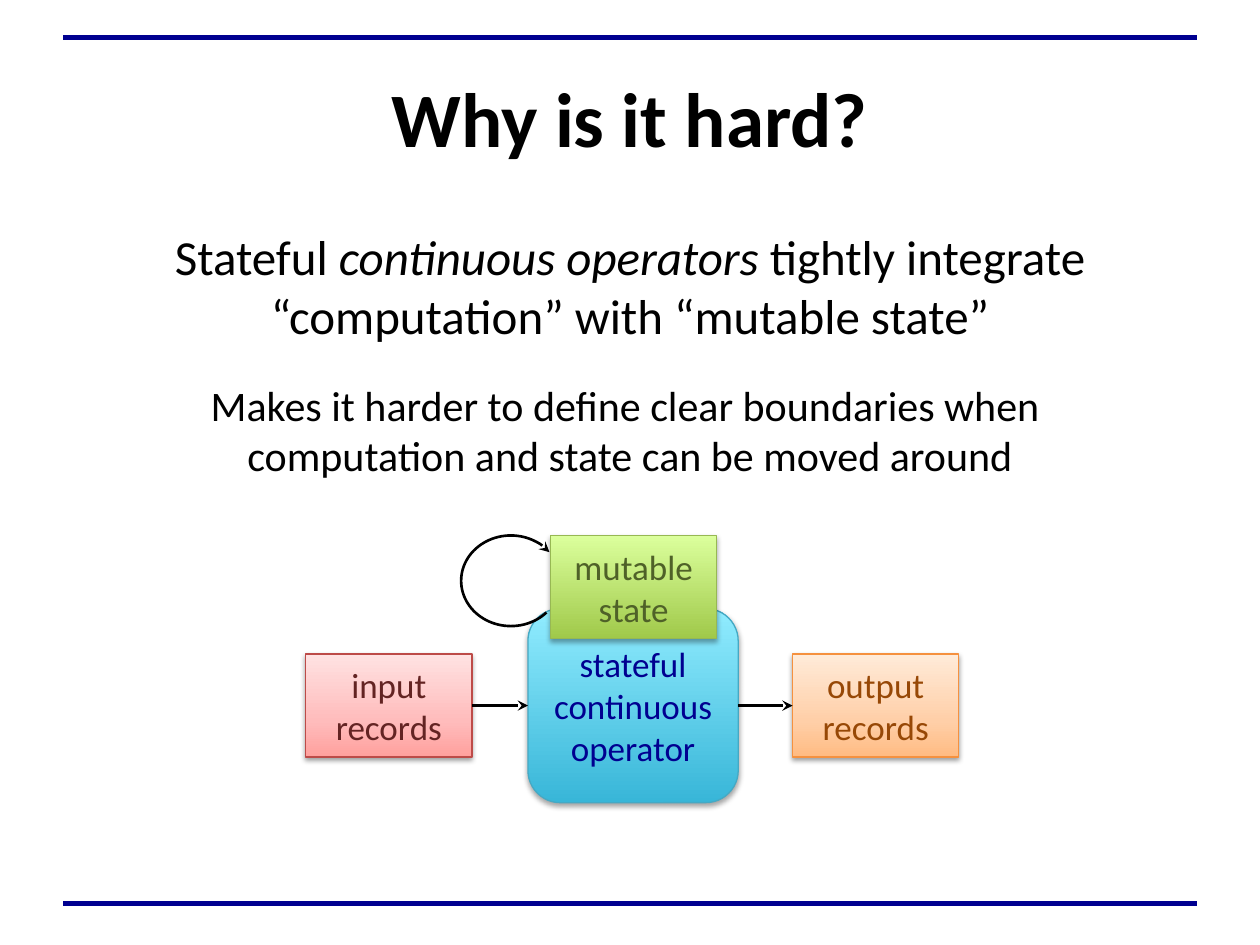
from lxml import etree
from pptx import Presentation
from pptx.dml.color import RGBColor
from pptx.enum.shapes import MSO_CONNECTOR, MSO_SHAPE
from pptx.enum.text import MSO_ANCHOR, PP_ALIGN
from pptx.oxml.ns import qn
from pptx.util import Pt

LINE = MSO_CONNECTOR.STRAIGHT
RECT, ROUND, ARC = MSO_SHAPE.RECTANGLE, MSO_SHAPE.ROUNDED_RECTANGLE, MSO_SHAPE.ARC
TOP, MIDDLE, CENTER = MSO_ANCHOR.TOP, MSO_ANCHOR.MIDDLE, PP_ALIGN.CENTER
hue = RGBColor.from_string


def write(shape, paras, sizes, color="000000", bold=False, gaps=(), side=7.2, anchor=MIDDLE):
    frame = shape.text_frame
    frame.word_wrap = True
    frame.vertical_anchor = anchor
    frame.margin_left = frame.margin_right = Pt(side)
    frame.margin_top = frame.margin_bottom = Pt(3.6)
    for i, runs in enumerate(paras):
        para = frame.paragraphs[0] if i == 0 else frame.add_paragraph()
        para.alignment = CENTER
        para.space_before = Pt(gaps[i] if gaps else 0)
        for j, text in enumerate(runs):
            run = para.add_run()
            run.text = text
            font = run.font
            font.name, font.size = "Calibri", Pt(sizes[i])
            font.bold, font.italic = bold, j % 2 == 1
            font.color.rgb = hue(color)


def stroke(shape, color, width, arrow=False):
    shape.line.color.rgb = hue(color)
    shape.line.width = Pt(width)
    props = shape._element.spPr
    if arrow:
        etree.SubElement(props.find(qn("a:ln")), qn("a:tailEnd"), type="stealth")
    if props.find(qn("a:effectLst")) is None:
        etree.SubElement(props, qn("a:effectLst"))


deck = Presentation()
deck.slide_width, deck.slide_height = Pt(720), Pt(540)
slide = deck.slides.add_slide(deck.slide_layouts[6])
shapes = slide.shapes

for y in (21.6, 516.24):
    rule = shapes.add_connector(LINE, Pt(36), Pt(y), Pt(684), Pt(y))
    stroke(rule, "000090", 3)

title = shapes.add_textbox(Pt(36), Pt(21.6), Pt(648), Pt(90))
write(title, [["Why is it hard?"]], [44], bold=True)

body = shapes.add_textbox(Pt(36), Pt(126), Pt(648), Pt(356.4))
points = [
    ["Stateful ", "continuous operators", " tightly integrate “computation” with “mutable state”"],
    ["Makes it harder to define clear boundaries when "],
    ["computation and state can be moved around"],
]
write(body, points, [28, 24, 24], gaps=(0, 20, 0), anchor=TOP)

boxes = [
    (ROUND, 301.7, 347.8, 120.2, 110.9, ["stateful", "continuous operator"], "000090", "45A9C4",
     [(0, "38B6D8"), (100, "91ECFF")], 35, 1.8),
    (RECT, 314.6, 306, 95, 59, ["mutable state"], "4F6128", "97B853",
     [(0, "A0C94A"), (100, "DBFF9C")], 35, 1.8),
    (RECT, 174.7, 373.7, 95, 59, ["input", "records"], "632423", "BD4B48",
     [(0, "FFA09D"), (35, "FFBCBC"), (100, "FFE2E2")], 38, 1.6),
    (RECT, 452.9, 373.7, 95, 59, ["output", "records"], "974806", "F5913F",
     [(0, "FFBB82"), (35, "FFCFA8"), (100, "FFEBD9")], 38, 1.6),
]
for kind, x, y, w, h, lines, ink, edge, stops, alpha, drop in boxes:
    box = shapes.add_shape(kind, Pt(x), Pt(y), Pt(w), Pt(h))
    box.fill.gradient()
    grad = box._element.spPr.find(qn("a:gradFill"))
    for child in list(grad):
        grad.remove(child)
    ramp = etree.SubElement(grad, qn("a:gsLst"))
    for pos, color in stops:
        stop = etree.SubElement(ramp, qn("a:gs"), pos=str(pos * 1000))
        etree.SubElement(stop, qn("a:srgbClr"), val=color)
    etree.SubElement(grad, qn("a:lin"), ang="16200000", scaled="0")
    stroke(box, edge, 0.75)
    glow = box._element.spPr.find(qn("a:effectLst"))
    shade = etree.SubElement(glow, qn("a:outerShdw"), blurRad=str(Pt(3.1)),
                             dist=str(Pt(drop)), dir="5400000", rotWithShape="0")
    black = etree.SubElement(shade, qn("a:srgbClr"), val="000000")
    etree.SubElement(black, qn("a:alpha"), val=str(alpha * 1000))
    write(box, [[line] for line in lines], [20] * len(lines), color=ink, side=0)

for start, end in ((269.7, 301.7), (421.9, 452.9)):
    arrow = shapes.add_connector(LINE, Pt(start), Pt(403.2), Pt(end), Pt(403.2))
    stroke(arrow, "000000", 1.5, arrow=True)

loop = shapes.add_shape(ARC, Pt(263.5), Pt(306), Pt(56.9), Pt(51.8))
loop.adjustments[0], loop.adjustments[1] = 25.04, 194.06
loop.fill.background()
stroke(loop, "000000", 1.5, arrow=True)

deck.save("out.pptx")
